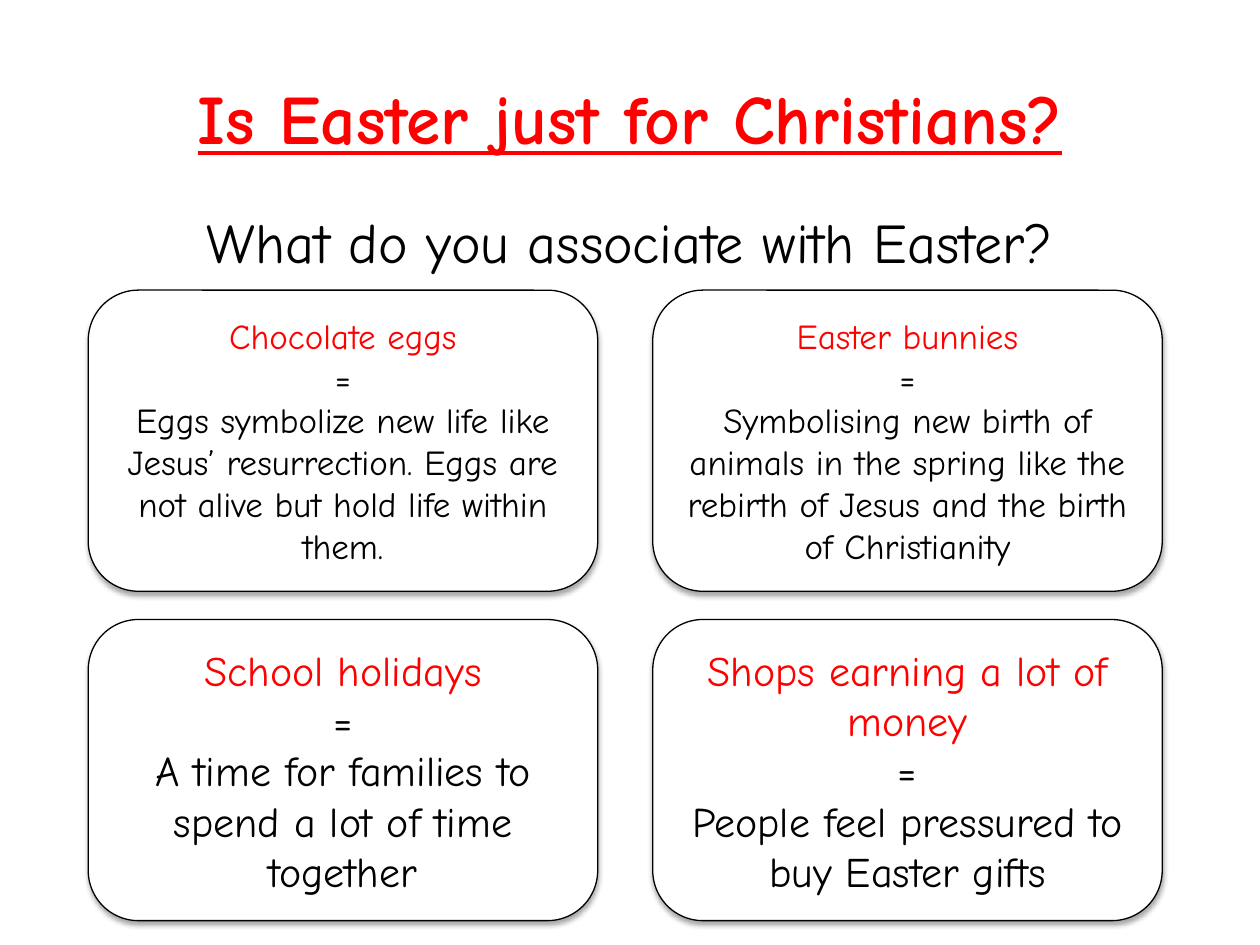
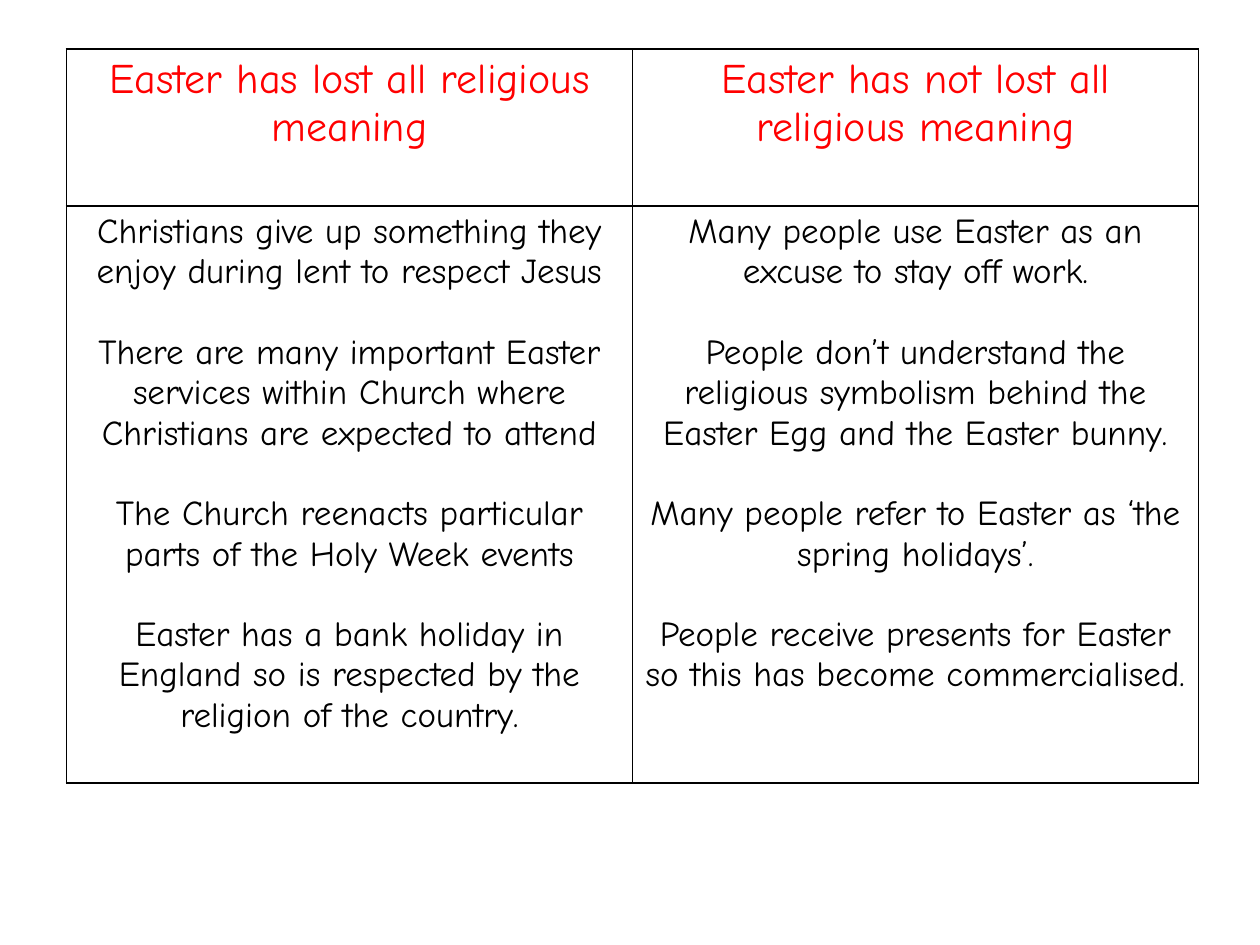
"""Build two slides on whether Easter is just for Christians."""
from dataclasses import dataclass

from lxml import etree
from pptx import Presentation
from pptx.dml.color import RGBColor
from pptx.enum.shapes import MSO_SHAPE
from pptx.enum.text import MSO_ANCHOR, PP_ALIGN
from pptx.oxml.ns import qn
from pptx.util import Cm, Pt

ROUNDED = MSO_SHAPE.ROUNDED_RECTANGLE
CENTER = PP_ALIGN.CENTER
TOP, MIDDLE = MSO_ANCHOR.TOP, MSO_ANCHOR.MIDDLE


@dataclass(frozen=True)
class Theme:
    font: str = "Comic Neue"
    accent: str = "FF0000"
    ink: str = "000000"
    paper: str = "FFFFFF"
    title: float = 39.6
    question: int = 32
    large: int = 24
    normal: int = 20
    paragraph_gap: int = 23
    card_line: float = 0.75
    table_line: int = 1


THEME = Theme()

TITLE = "Is Easter just for Christians?"
QUESTION = "What do you associate with Easter?"
CARDS = [
    ("Chocolate eggs", "Eggs symbolize new life like Jesus’ resurrection. "
     "Eggs are not alive but hold life within them.", THEME.normal),
    ("Easter bunnies", "Symbolising new birth of animals in the spring like "
     "the rebirth of Jesus and the birth of Christianity", THEME.normal),
    ("School holidays", "A time for families to spend a lot of time together",
     THEME.large),
    ("Shops earning a lot of money",
     "People feel pressured to buy Easter gifts", THEME.large),
]
ARGUMENTS = {
    "Easter has lost all religious meaning": [
        "Christians give up something they enjoy during lent to respect Jesus",
        "There are many important Easter services within Church where "
        "Christians are expected to attend",
        "The Church reenacts particular parts of the Holy Week events",
        "Easter has a bank holiday in England so is respected by the religion "
        "of the country.",
    ],
    "Easter has not lost all religious meaning": [
        "Many people use Easter as an excuse to stay off work.",
        "People don’t understand the religious symbolism behind the Easter "
        "Egg and the Easter bunny.",
        "Many people refer to Easter as ‘the spring holidays’.",
        "People receive presents for Easter so this has become "
        "commercialised.",
    ],
}

CARD_LEFT, CARD_TOP = 1.78, 5.85
CARD_WIDTH, CARD_HEIGHT = 10.27, 6.07
CARD_STEP_X, CARD_STEP_Y = 11.38, 6.64
TABLE_LEFT, TABLE_TOP = 1.34, 0.99
COLUMN_WIDTH = 11.41
ROW_HEIGHTS = (3.16, 11.63)


def rgb(color):
    return RGBColor.from_string(color)


def write(tf, lines, gap=0, heading=False):
    for i, (text, size, color) in enumerate(lines):
        p = tf.paragraphs[0] if i == 0 else tf.add_paragraph()
        p.alignment = CENTER
        if i and gap:
            p.space_before = Pt(gap)
        r = p.add_run()
        r.text = text
        r.font.name = THEME.font
        r.font.size = Pt(size)
        r.font.color.rgb = rgb(color)
        if heading:
            r.font.bold = r.font.underline = True


def add_text(slide, top, height, line, anchor, heading=False):
    sp = slide.shapes.add_textbox(Cm(1.27), Cm(top), Cm(22.86), Cm(height))
    tf = sp.text_frame
    tf.word_wrap = True
    tf.vertical_anchor = anchor
    write(tf, [line], heading=heading)
    return sp


def add_color(parent, color):
    return etree.SubElement(parent, qn("a:srgbClr"), val=color)


def add_shadow(sp):
    sp.shadow.inherit = False
    effects = sp._element.spPr.find(qn("a:effectLst"))
    shadow = etree.SubElement(
        effects, qn("a:outerShdw"), blurRad=str(Pt(3.1)), dist=str(Pt(1.8)),
        dir="5400000", rotWithShape="0")
    color = add_color(shadow, THEME.ink)
    etree.SubElement(color, qn("a:alpha"), val="35000")


def add_card(slide, index, heading, meaning, size):
    row, col = divmod(index, 2)
    sp = slide.shapes.add_shape(
        ROUNDED, Cm(CARD_LEFT + col * CARD_STEP_X),
        Cm(CARD_TOP + row * CARD_STEP_Y), Cm(CARD_WIDTH), Cm(CARD_HEIGHT))
    sp.fill.solid()
    sp.fill.fore_color.rgb = rgb(THEME.paper)
    sp.line.color.rgb = rgb(THEME.ink)
    sp.line.width = Pt(THEME.card_line)
    add_shadow(sp)
    tf = sp.text_frame
    tf.word_wrap = True
    tf.vertical_anchor = MIDDLE
    write(tf, [(heading, size, THEME.accent), ("=", size, THEME.ink),
               (meaning, size, THEME.ink)])


def style_cell(cell):
    tc_pr = cell._tc.get_or_add_tcPr()
    for side in ("lnL", "lnR", "lnT", "lnB"):
        ln = etree.SubElement(tc_pr, qn(f"a:{side}"),
                              w=str(Pt(THEME.table_line)))
        add_color(etree.SubElement(ln, qn("a:solidFill")), THEME.ink)
    fill = etree.SubElement(tc_pr, qn("a:solidFill"))
    add_color(fill, THEME.paper)


def add_arguments(slide):
    table = slide.shapes.add_table(
        len(ROW_HEIGHTS), len(ARGUMENTS), Cm(TABLE_LEFT), Cm(TABLE_TOP),
        Cm(COLUMN_WIDTH * len(ARGUMENTS)), Cm(sum(ROW_HEIGHTS))).table
    for row, height in zip(table.rows, ROW_HEIGHTS):
        row.height = Cm(height)
    for col, (claim, reasons) in enumerate(ARGUMENTS.items()):
        table.columns[col].width = Cm(COLUMN_WIDTH)
        head, body = table.cell(0, col), table.cell(1, col)
        write(head.text_frame, [(claim, THEME.large, THEME.accent)])
        write(body.text_frame,
              [(reason, THEME.normal, THEME.ink) for reason in reasons],
              gap=THEME.paragraph_gap)
        style_cell(head)
        style_cell(body)


def add_slide(prs):
    slide = prs.slides.add_slide(prs.slide_layouts[6])
    slide.background.fill.solid()
    slide.background.fill.fore_color.rgb = rgb(THEME.paper)
    return slide


def main():
    prs = Presentation()
    prs.slide_width, prs.slide_height = Cm(25.4), Cm(19.05)

    s = add_slide(prs)
    add_text(s, 0.76, 3.18, (TITLE, THEME.title, THEME.accent), MIDDLE,
             heading=True)
    question = add_text(s, 3.94, 1.9, (QUESTION, THEME.question, THEME.ink),
                        TOP)
    question.text_frame.margin_top = Cm(0.25)
    for i, card in enumerate(CARDS):
        add_card(s, i, *card)

    add_arguments(add_slide(prs))
    prs.save("out.pptx")


if __name__ == "__main__":
    main()
